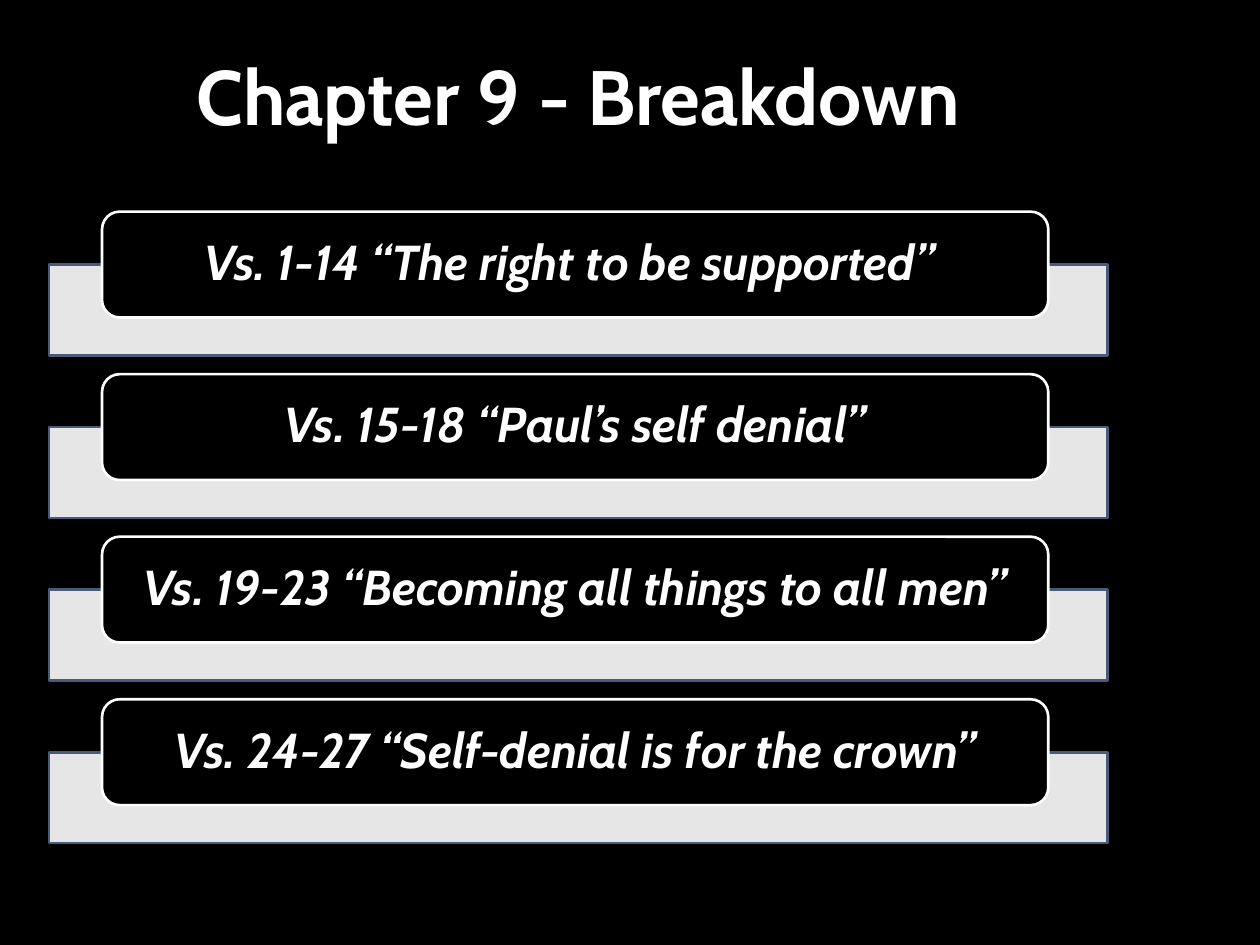
from lxml import etree
from pptx import Presentation
from pptx import util as u
from pptx.dml.color import RGBColor
from pptx.enum import shapes, text
from pptx.oxml.ns import qn

BLACK = RGBColor(0x00, 0x00, 0x00)
WHITE = RGBColor(0xFF, 0xFF, 0xFF)
SLATE = RGBColor(0x4A, 0x5A, 0x7A)

FONT = "Cabin"
SECTIONS = [
    "Vs. 1-14 “The right to be supported” ",
    "Vs. 15-18 “Paul’s self denial”",
    "Vs. 19-23 “Becoming all things to all men”",
    "Vs. 24-27 “Self-denial is for the crown”",
]
FIRST_TOP, STEP = 1.68, 1.29  # top of the first label, distance between labels
BAR_DROP = 0.42               # how far a bar starts below its label's top

TITLE_FONT = {"name": FONT, "size": u.Pt(44), "bold": True}
LABEL_FONT = {"name": FONT, "size": u.Pt(28), "bold": True, "italic": True}
TITLE_FRAME = {"vertical_anchor": text.MSO_ANCHOR.BOTTOM}
LABEL_FRAME = {
    "vertical_anchor": text.MSO_ANCHOR.MIDDLE,
    "margin_left": u.Inches(0.26), "margin_right": u.Inches(0.26),
    "margin_top": 0, "margin_bottom": 0,
}
TITLE_PARA = {"space_before": u.Pt(4)}
LABEL_PARA = {"line_spacing": 0.9}


def set_all(target, values):
    for name, value in values.items():
        setattr(target, name, value)


def write(shape, words, frame_format, para_format, font_format):
    """Put one centred white line of text in a shape."""
    frame = shape.text_frame
    set_all(frame, {"word_wrap": True, "auto_size": text.MSO_AUTO_SIZE.NONE,
                    **frame_format})
    para = frame.paragraphs[0]
    set_all(para, {"alignment": text.PP_ALIGN.CENTER, **para_format})
    span = para.add_run()
    span.text = words
    set_all(span.font, font_format)
    span.font.color.rgb = WHITE


def add_box(page, kind, left, top, width, height, fill, line):
    box = page.shapes.add_shape(kind, *map(u.Inches, (left, top, width, height)))
    box.shadow.inherit = False
    box.fill.solid()
    box.fill.fore_color.rgb = fill
    box.line.color.rgb = line
    box.line.width = u.Pt(1.5)
    return box


def add_bar(page, top):
    bar = add_box(page, shapes.MSO_SHAPE.RECTANGLE, 0.39, top, 8.4, 0.72, WHITE, SLATE)
    # Fill at 90 % opacity
    color = bar.fill._xPr.find(qn("a:solidFill"))[0]
    etree.SubElement(color, qn("a:alpha"), val="90000")


def add_label(page, top, words):
    label = add_box(page, shapes.MSO_SHAPE.ROUNDED_RECTANGLE,
                    0.81, top, 7.51, 0.84, BLACK, WHITE)
    write(label, words, LABEL_FRAME, LABEL_PARA, LABEL_FONT)


def add_title(page, words):
    title = page.shapes.title
    set_all(title, {"left": u.Inches(0.39), "top": u.Inches(0.25),
                    "width": u.Inches(8.4), "height": u.Inches(0.92)})
    write(title, words, TITLE_FRAME, TITLE_PARA, TITLE_FONT)


def main():
    deck = Presentation()
    deck.slide_width, deck.slide_height = u.Inches(10), u.Inches(7.5)
    page = deck.slides.add_slide(deck.slide_layouts[5])

    # Background and title
    page.background.fill.solid()
    page.background.fill.fore_color.rgb = BLACK
    add_title(page, "Chapter 9 - Breakdown")

    # One bar with a label over it for each section
    for index, words in enumerate(SECTIONS):
        top = FIRST_TOP + index * STEP
        add_bar(page, top + BAR_DROP)
        add_label(page, top, words)

    deck.save("out.pptx")


if __name__ == "__main__":
    main()
